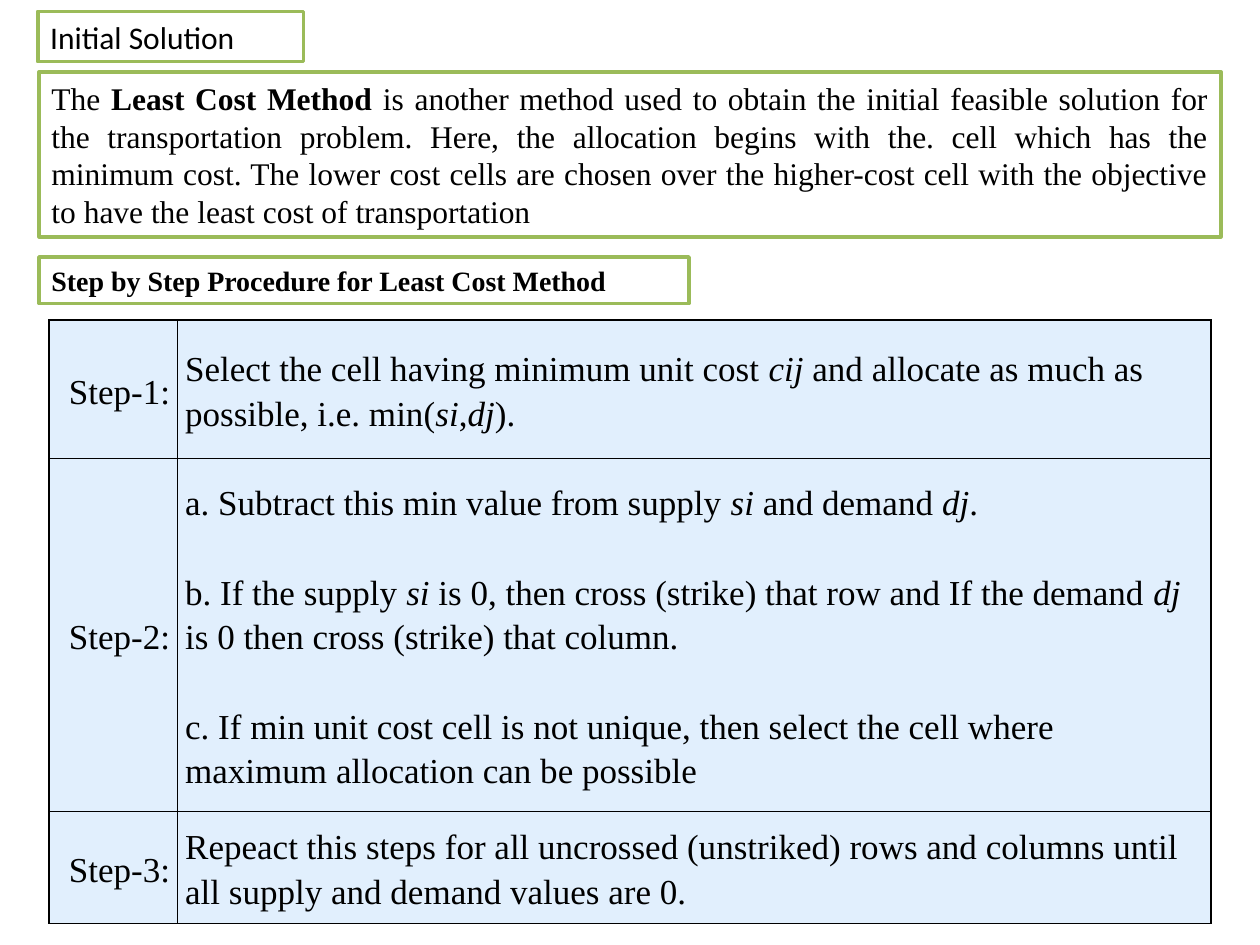
from lxml.etree import SubElement
from pptx import Presentation
from pptx.dml.color import RGBColor
from pptx.enum.shapes import MSO_SHAPE as Shape
from pptx.enum.text import MSO_ANCHOR as Anchor, PP_ALIGN as Align
from pptx.oxml.ns import qn
from pptx.util import Inches, Pt

SERIF, SANS = "Times New Roman", "Calibri"
BLACK, WHITE, GREEN, PALE_BLUE = "000000", "FFFFFF", "9BBB59", "E1EFFD"

# Asterisks enclose emphasised words.
boxes = [
    ("The *Least Cost Method* is another method used to obtain the initial feasible "
     "solution for the transportation problem. Here, the allocation begins with the. "
     "cell which has the minimum cost. The lower cost cells are chosen over the "
     "higher-cost cell with the objective to have the least cost of transportation",
     (0.31, 0.57, 9.38, 1.31), SERIF, 18, Align.JUSTIFY, Anchor.MIDDLE),
    ("*Step by Step Procedure for Least Cost Method*",
     (0.31, 2.04, 5.16, 0.37), SERIF, 16, Align.JUSTIFY, Anchor.MIDDLE),
    ("Initial Solution",
     (0.3, 0.09, 2.11, 0.4), SANS, 18, Align.LEFT, Anchor.TOP),
]

steps = [
    ("Step-1:", 1.1, [
        "Select the cell having minimum unit cost *cij* and allocate as much as "
        "possible, i.e. min(*si*,*dj*)."]),
    ("Step-2:", 2.8, [
        "a. Subtract this min value from supply *si* and demand *dj*.",
        "b. If the supply *si* is 0, then cross (strike) that row and If the "
        "demand *dj* is 0 then cross (strike) that column.",
        "c. If min unit cost cell is not unique, then select the cell where "
        "maximum allocation can be possible"]),
    ("Step-3:", 0.89, [
        "Repeact this steps for all uncrossed (unstriked) rows and columns until "
        "all supply and demand values are 0."]),
]
column_widths = (1.02, 8.2)
table_left, table_top = 0.39, 2.54


def color(hex_value):
    return RGBColor.from_string(hex_value)


def write(paragraph, text, font_name, size, align, emphasis):
    paragraph.alignment = align
    paragraph.font.name = font_name
    paragraph.font.size = Pt(size)
    paragraph.font.color.rgb = color(BLACK)
    for index, part in enumerate(text.split("*")):
        if part:
            run = paragraph.add_run()
            run.text = part
            if index % 2:
                setattr(run.font, emphasis, True)


def add_box(slide, text, place, font_name, size, align, anchor):
    box = slide.shapes.add_shape(Shape.RECTANGLE, *map(Inches, place))
    box.shadow.inherit = False
    box.fill.solid()
    box.fill.fore_color.rgb = color(WHITE)
    box.line.color.rgb = color(GREEN)
    box.line.width = Pt(2)
    frame = box.text_frame
    frame.word_wrap = True
    frame.vertical_anchor = anchor
    write(frame.paragraphs[0], text, font_name, size, align, "bold")


def add_borders(cell):
    properties = cell._tc.get_or_add_tcPr()
    for index, side in enumerate(("a:lnL", "a:lnR", "a:lnT", "a:lnB")):
        border = SubElement(properties, qn(side), w=str(Pt(1)))
        fill = SubElement(border, qn("a:solidFill"))
        SubElement(fill, qn("a:srgbClr"), val=BLACK)
        properties.insert(index, border)


def fill_cell(cell, texts, align):
    cell.margin_left = cell.margin_right = Inches(0.06)
    cell.margin_top = cell.margin_bottom = Inches(0.06)
    cell.vertical_anchor = Anchor.MIDDLE
    cell.fill.solid()
    cell.fill.fore_color.rgb = color(PALE_BLUE)
    add_borders(cell)
    frame = cell.text_frame
    for index, text in enumerate(texts):
        paragraph = frame.add_paragraph() if index else frame.paragraphs[0]
        paragraph.line_spacing = 1.15
        if index:
            paragraph.space_before = Pt(25.5)
        write(paragraph, text, SERIF, 20, align, "italic")


def add_steps(slide):
    height = sum(row_height for _, row_height, _ in steps)
    table = slide.shapes.add_table(
        len(steps), len(column_widths), Inches(table_left), Inches(table_top),
        Inches(sum(column_widths)), Inches(height)).table
    table.first_row = table.horz_banding = False
    for column, width in zip(table.columns, column_widths):
        column.width = Inches(width)
    for index, (label, row_height, texts) in enumerate(steps):
        table.rows[index].height = Inches(row_height)
        fill_cell(table.cell(index, 0), [label], Align.RIGHT)
        fill_cell(table.cell(index, 1), texts, Align.LEFT)


def main():
    deck = Presentation()
    deck.slide_width, deck.slide_height = Inches(10), Inches(7.5)
    slide = deck.slides.add_slide(deck.slide_layouts[6])
    for box in boxes[:2]:
        add_box(slide, *box)
    add_steps(slide)
    add_box(slide, *boxes[2])
    deck.save("out.pptx")


if __name__ == "__main__":
    main()
